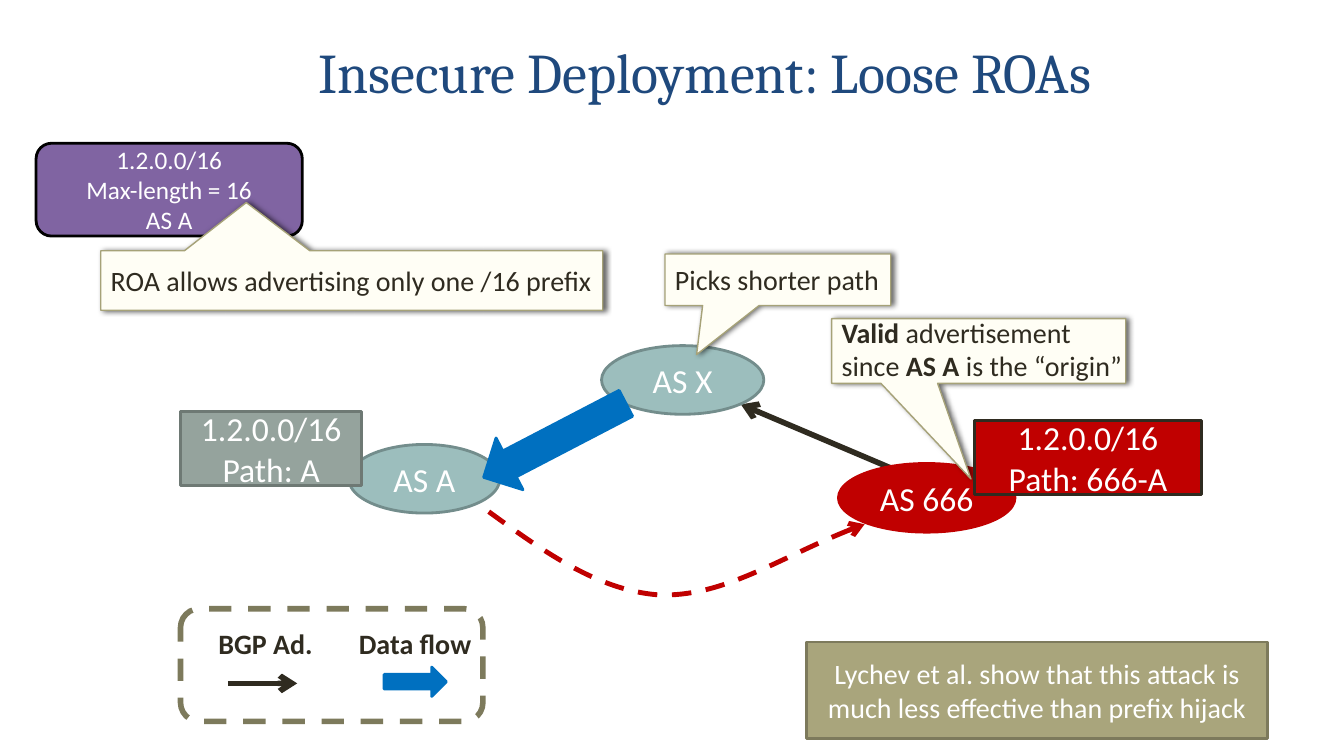
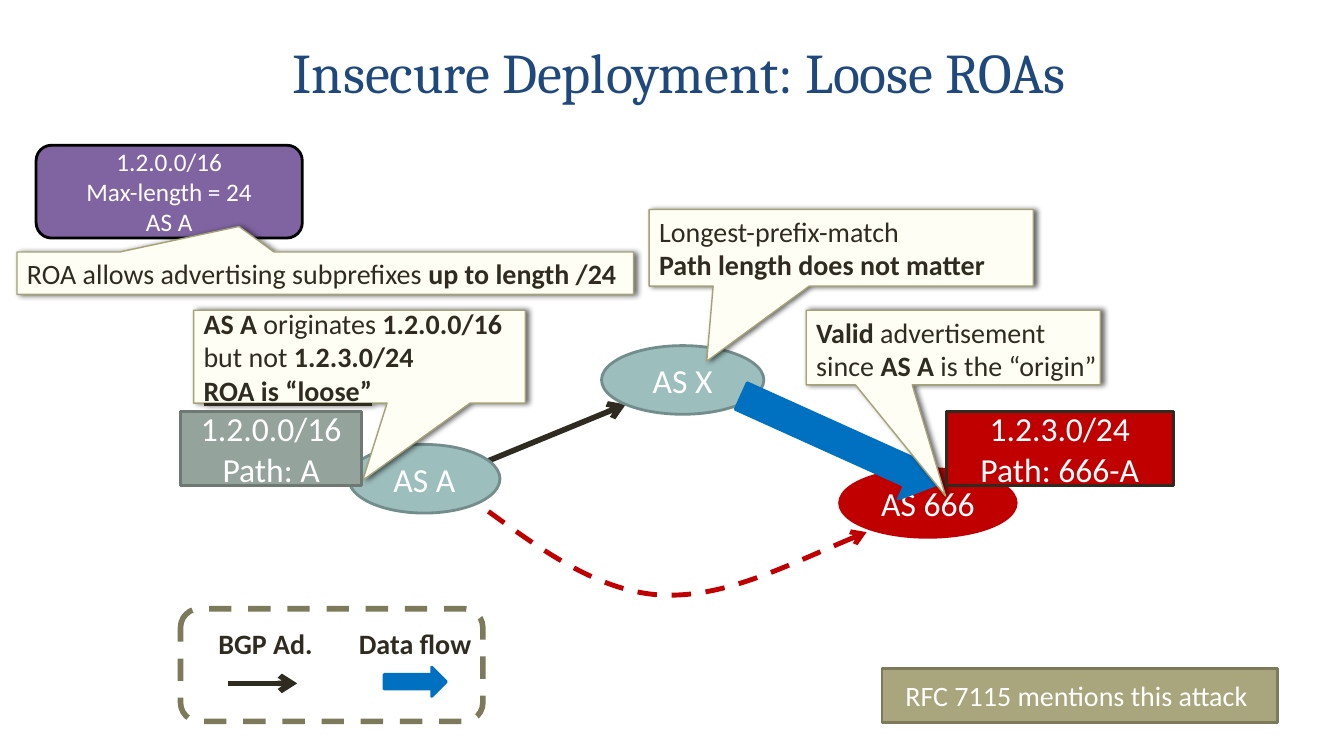
from lxml import etree
from pptx import Presentation
from pptx import util as u
from pptx.dml.color import RGBColor
from pptx.enum import dml, shapes, text
from pptx.oxml.ns import qn

WHITE = RGBColor(0xFF, 0xFF, 0xFF)
BLACK = RGBColor(0x00, 0x00, 0x00)
INK = RGBColor(0x2F, 0x2B, 0x20)
NAVY = RGBColor(0x1F, 0x49, 0x7D)
RED = RGBColor(0xC0, 0x00, 0x00)
BLUE = RGBColor(0x00, 0x70, 0xC0)
PURPLE = RGBColor(0x80, 0x64, 0xA2)
TEAL = RGBColor(0x9C, 0xBE, 0xBD)
TEAL_EDGE = RGBColor(0x73, 0x8D, 0x8C)
SAGE = RGBColor(0x95, 0xA3, 0x9D)
SAGE_EDGE = RGBColor(0x6E, 0x79, 0x74)
KHAKI = RGBColor(0xA9, 0xA5, 0x7C)
KHAKI_EDGE = RGBColor(0x7D, 0x7A, 0x5C)
CREAM = RGBColor(0xFF, 0xFE, 0xF5)
CREAM_EDGE = RGBColor(0xA6, 0xA2, 0x78)

SHAPE = shapes.MSO_SHAPE
CENTER = text.PP_ALIGN.CENTER
LEFT = text.PP_ALIGN.LEFT
BOLD = {"bold": True}


def write_text(frame, lines, *, size=20, color=WHITE, font="Calibri", bold=False,
               align=CENTER, anchor=text.MSO_ANCHOR.MIDDLE):
    frame.word_wrap = True
    frame.vertical_anchor = anchor
    for index, line in enumerate(lines):
        para = frame.add_paragraph() if index else frame.paragraphs[0]
        para.alignment = align
        for piece in [line] if isinstance(line, str) else line:
            words, extra = (piece, {}) if isinstance(piece, str) else piece
            span = para.add_run()
            span.text = words
            span.font.name = font
            span.font.size = u.Pt(size)
            span.font.color.rgb = color
            span.font.bold = extra.get("bold", bold)
            span.font.underline = extra.get("underline", False)


class Sketch:
    def __init__(self):
        self.deck = Presentation()
        self.deck.slide_width = u.Cm(33.87)
        self.deck.slide_height = u.Cm(19.05)
        self.page = None

    def new_page(self):
        self.page = self.deck.slides.add_slide(self.deck.slide_layouts[6])

    def style(self, shape, fill, edge, width=2, dash=None):
        shape.shadow.inherit = False
        if fill is None:
            shape.fill.background()
        else:
            shape.fill.solid()
            shape.fill.fore_color.rgb = fill
        shape.line.color.rgb = edge
        shape.line.width = u.Pt(width)
        if dash:
            shape.line.dash_style = dash

    def box(self, kind, place, fill, edge, lines=(), width=2, dash=None, **format):
        shape = self.page.shapes.add_shape(kind, *map(u.Cm, place))
        self.style(shape, fill, edge, width, dash)
        write_text(shape.text_frame, lines, **format)
        return shape

    def label(self, place, lines, **format):
        box = self.page.shapes.add_textbox(*map(u.Cm, place))
        write_text(box.text_frame, lines, **format)

    def title(self, left, width, words):
        self.label((left, 0.2, width, 3.18), [words], size=40, color=NAVY, font="Cambria")

    def node(self, left, top, width, name, fill=TEAL, edge=TEAL_EDGE):
        self.box(SHAPE.OVAL, (left, top, width, 1.73), fill, edge, [name], size=24)

    def route(self, left, top, width, lines, fill, edge):
        self.box(SHAPE.RECTANGLE, (left, top, width, 1.88), fill, edge, lines, size=24)

    def flow(self, place, angle=0):
        self.box(SHAPE.RIGHT_ARROW, place, BLUE, BLUE).rotation = angle

    def note(self, place, words):
        self.box(SHAPE.RECTANGLE, place, KHAKI, KHAKI_EDGE, [words])

    def arrowhead(self, shape, end):
        line = shape.element.spPr.find(qn("a:ln"))
        etree.SubElement(line, qn(end), type="arrow")

    def advert(self, start, end):
        line = self.page.shapes.add_connector(
            shapes.MSO_CONNECTOR.STRAIGHT, *map(u.Cm, start + end))
        line.line.color.rgb = INK
        line.line.width = u.Pt(4)
        self.arrowhead(line, "a:tailEnd")
        etree.SubElement(line.element.spPr, qn("a:effectLst"))

    def outline(self, points, close):
        first, *rest = [tuple(map(u.Cm, point)) for point in points]
        builder = self.page.shapes.build_freeform(*first)
        builder.add_line_segments(rest, close=close)
        return builder.convert_to_shape()

    def curve(self, points):
        shape = self.outline(points, close=False)
        self.style(shape, None, RED, 3.5, dml.MSO_LINE.DASH)
        self.arrowhead(shape, "a:headEnd")
        track = shape.element.find(".//" + qn("a:path"))
        steps = track.findall(qn("a:lnTo"))
        for start in range(0, len(steps), 3):
            bend = etree.SubElement(track, qn("a:cubicBezTo"))
            for step in steps[start:start + 3]:
                bend.append(step[0])
                track.remove(step)

    def drop_shadow(self, shape):
        effects = shape.element.spPr.find(qn("a:effectLst"))
        shadow = etree.SubElement(effects, qn("a:outerShdw"), blurRad=str(u.Pt(4)),
                                  dist=str(u.Pt(2)), dir="0", rotWithShape="0")
        tint = etree.SubElement(shadow, qn("a:srgbClr"), val=str(BLACK))
        etree.SubElement(tint, qn("a:alpha"), val="60000")

    def callout(self, place, tip, lines):
        shape = self.box(SHAPE.RECTANGULAR_CALLOUT, place, CREAM, CREAM_EDGE, lines,
                         width=1, color=INK, align=LEFT)
        shape.adjustments[0], shape.adjustments[1] = tip
        self.drop_shadow(shape)

    def origin_callout(self, left, top, height, tip_top):
        right, bottom = left + 7.41, top + height
        shape = self.outline([(left, top), (right, top), (right, bottom),
                              (left + 2.67, bottom), (left + 3.51, tip_top),
                              (left + 1.24, bottom)] + [(left, bottom)], close=True)
        self.style(shape, CREAM, CREAM_EDGE, 1)
        self.drop_shadow(shape)
        self.label((left, 7.82, 7.65, 2.82),
                   [[("Valid", BOLD), " advertisement since ", ("AS A ", BOLD),
                     "is the “origin”"]],
                   color=INK, align=LEFT, anchor=text.MSO_ANCHOR.TOP)

    def legend(self):
        self.box(SHAPE.ROUNDED_RECTANGLE, (4.55, 15.34, 7.62, 2.84), WHITE, KHAKI_EDGE,
                 width=4, dash=dml.MSO_LINE.DASH)
        self.label((5.03, 15.65, 3.33, 1.12), ["BGP Ad."], color=INK, bold=True,
                   anchor=text.MSO_ANCHOR.TOP)
        self.label((8.76, 15.67, 3.4, 1.12), ["Data flow"], color=INK, bold=True,
                   anchor=text.MSO_ANCHOR.TOP)
        self.advert((5.74, 17.22), (7.49, 17.22))
        self.flow((9.68, 16.81, 1.57, 0.74))

    def scene(self, *, title, advert, attacker, flow, angle, roa_top, max_length,
              callouts, origin, route, prefix, curve, note, remark):
        self.new_page()
        self.advert(*advert)
        self.node(15.16, 8.71, 4.09, "AS X")
        self.node(*attacker, 4.45, "AS 666", RED, RED)
        self.legend()
        self.node(8.79, 11.2, 3.81, "AS A")
        self.flow(flow, angle)
        self.title(*title, "Insecure Deployment: Loose ROAs")
        self.box(SHAPE.ROUNDED_RECTANGLE, (0.91, roa_top, 6.71, 2.34), PURPLE, BLACK,
                 ["1.2.0.0/16", f"Max-length = {max_length}", "AS A"], size=18)
        for place, tip, lines in callouts:
            self.callout(place, tip, lines)
        self.route(4.55, 10.36, 4.57, ["1.2.0.0/16", "Path: A"], SAGE, SAGE_EDGE)
        self.origin_callout(*origin)
        self.route(*route, 5.72, [prefix, "Path: 666-A"], RED, INK)
        self.curve(curve + [(16.59, 14.99), (14.96, 14.87), (13.49, 13.74), (12.09, 12.73)])
        self.note(note, remark)


def main():
    sketch = Sketch()
    sketch.scene(
        title=(5.28, 24.97),
        advert=((23.62, 12.29), (18.67, 10.19)),
        attacker=(21.13, 11.68),
        flow=(11.96, 10.36, 4.04, 1.47), angle=152.5,
        roa_top=3.61, max_length=16,
        callouts=[
            ((2.54, 6.32, 12.65, 1.5), (-0.21, -1.31),
             ["ROA allows advertising only one /16 prefix"]),
            ((16.76, 6.4, 5.69, 1.3), (-0.36, 1.45), ["Picks shorter path"]),
        ],
        origin=(20.96, 8.03, 1.63, 12.07),
        route=(24.56, 10.59), prefix="1.2.0.0/16",
        curve=[(21.79, 13.21), (19.84, 13.92), (18.21, 15.06)],
        note=(20.32, 16.18, 11.63, 2.44),
        remark="Lychev et al. show that this attack is much less effective than prefix hijack",
    )
    sketch.scene(
        title=(5.08, 24.08),
        advert=((12.14, 11.68), (15.77, 10.19)),
        attacker=(21.16, 11.81),
        flow=(18.44, 10.36, 5.41, 1.47), angle=24.3,
        roa_top=3.66, max_length=24,
        callouts=[
            ((16.36, 5.28, 9.68, 1.93), (-0.35, 1.48),
             ["Longest-prefix-match", [("Path length does not matter", BOLD)]]),
            ((0.43, 6.35, 15.54, 1.07), (-0.14, -1.1),
             [["ROA allows advertising subprefixes ", ("up to length /24", BOLD)]]),
            ((4.88, 7.82, 8.36, 2.34), (0.01, 1.33),
             [[("AS A ", BOLD), "originates ", ("1.2.0.0/16 ", BOLD), "but not ",
               ("1.2.3.0/24", BOLD)],
              [("ROA is “loose”", {"bold": True, "underline": True})]]),
        ],
        origin=(20.32, 7.82, 1.88, 12.5),
        route=(23.85, 10.36), prefix="1.2.3.0/24",
        curve=[(21.84, 13.41), (19.91, 14.2), (18.21, 15.09)],
        note=(22.23, 16.84, 9.96, 1.37),
        remark="RFC 7115 mentions this attack ",
    )
    sketch.deck.save("out.pptx")


if __name__ == "__main__":
    main()
